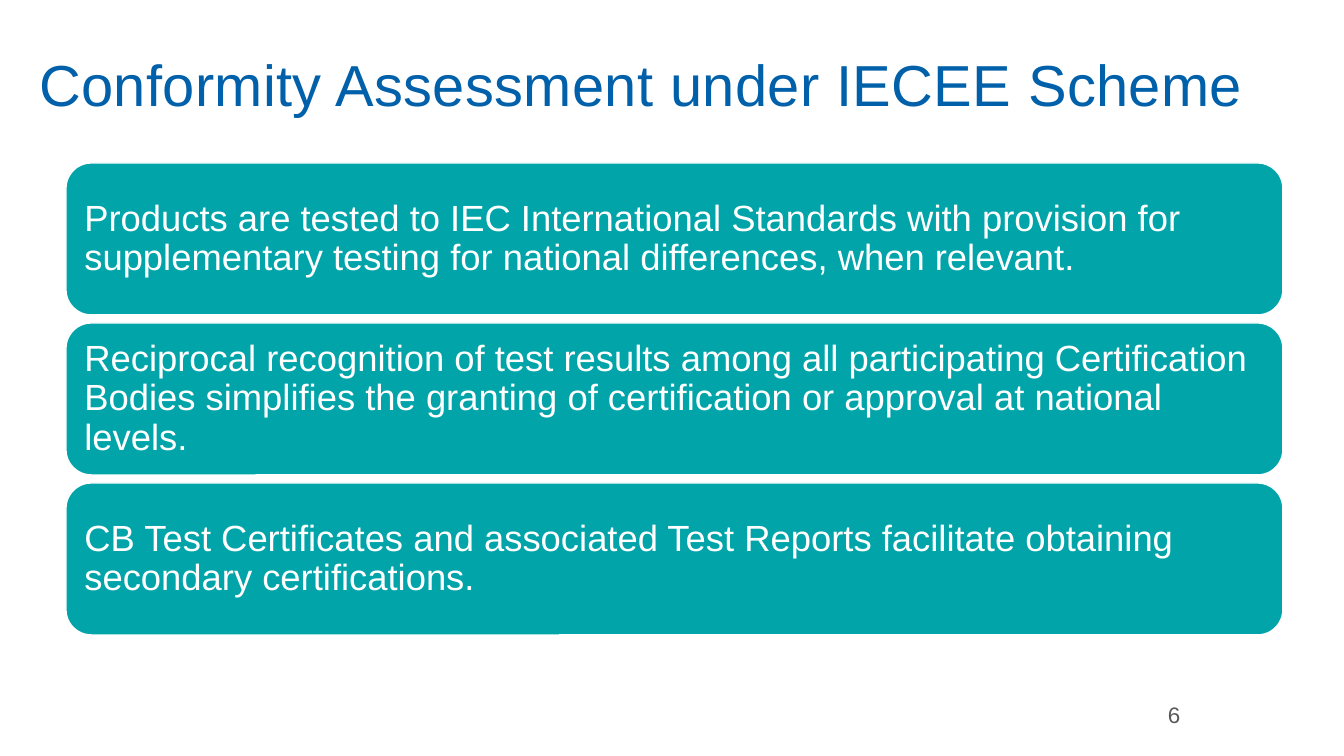
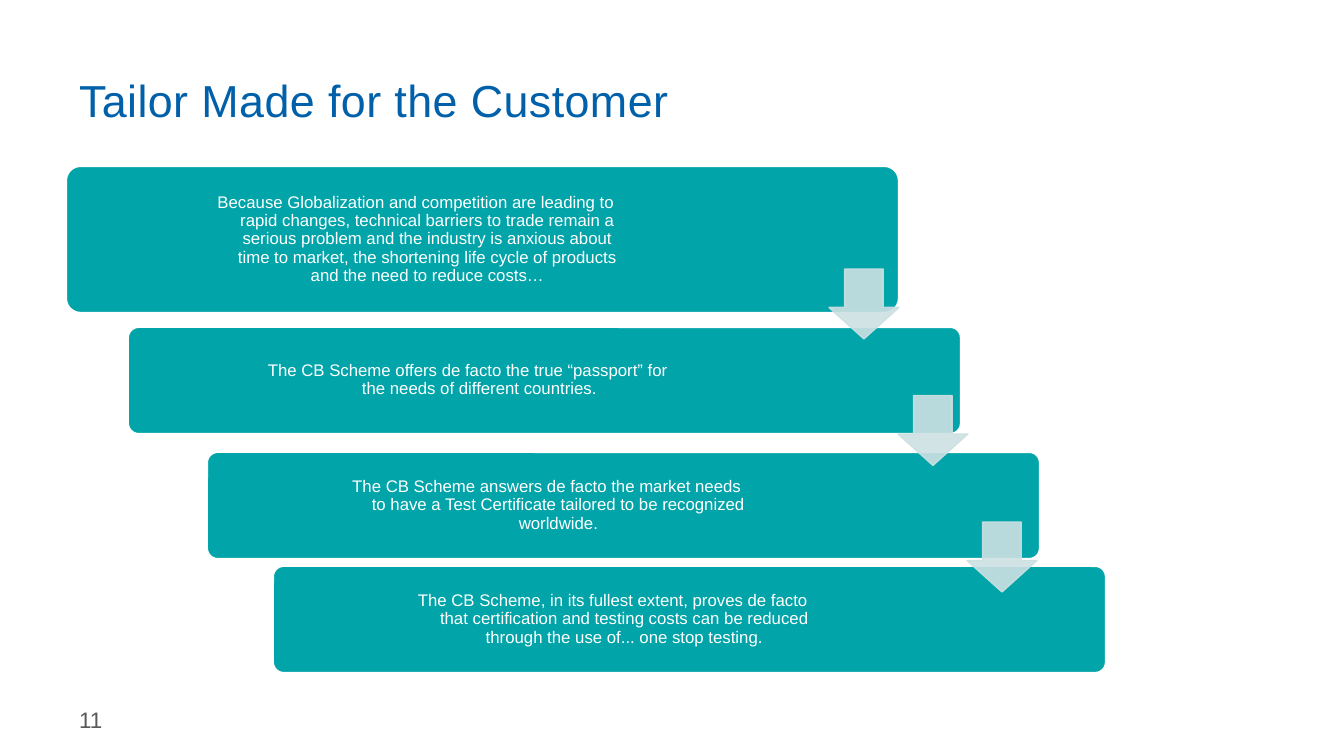
from lxml.etree import SubElement
from pptx import Presentation
from pptx.dml.color import RGBColor
from pptx.enum.shapes import MSO_SHAPE
from pptx.enum.text import MSO_ANCHOR, MSO_AUTO_SIZE, PP_ALIGN
from pptx.oxml.ns import qn
from pptx.util import Emu, Pt

# Shared style
FONT = "Arial"
TITLE, TEAL, PALE, GREY, WHITE = "0060A9", "00A4A9", "CCE0E2", "595959", "FFFFFF"
FRAME_INSETS = (13, 7, 13, 7)

# Content of the stacked panels
SCHEME_POINTS = [
    "Products are tested to IEC International Standards with provision for "
    "supplementary testing for national differences, when relevant.",
    "Reciprocal recognition of test results among all participating Certification "
    "Bodies simplifies the granting of certification or approval at national levels.",
    "CB Test Certificates and associated Test Reports facilitate obtaining "
    "secondary certifications.",
]
PANEL_LEFT, PANEL_TOP, PANEL_WIDTH, PANEL_HEIGHT, PANEL_STEP = 66, 163, 1217, 152, 160

# Content of the staircase: left, top, height, space kept free at the right, lines
STAIRS = [
    (66, 166, 147, 124, [
        "Because Globalization and competition are leading to",
        "rapid changes, technical barriers to trade remain a",
        "serious problem and the industry is anxious about",
        "time to market, the shortening life cycle of products",
        "and the need to reduce costs…"]),
    (128, 327, 107, 144, [
        "The CB Scheme offers de facto the true “passport” for",
        "the needs of different countries."]),
    (207, 452, 107, 144, [
        "The CB Scheme answers de facto the market needs",
        "to have a Test Certificate tailored to be recognized",
        "worldwide."]),
    (273, 566, 107, 144, [
        "The CB Scheme, in its fullest extent, proves de facto",
        "that certification and testing costs can be reduced",
        "through the use of... one stop testing."]),
]
STAIR_WIDTH = 833
HANG = 23  # later lines sit slightly right of the first
ARROW_LEFT, ARROW_TOP, ARROW_SIZE = 829, 269, 70
ARROW_STEP_X, ARROW_STEP_Y = 69, 126.5


def px(length):
    return Emu(round(length * 914400 / 100.8))


def rgb(value):
    return RGBColor.from_string(value)


def place(shape, left, top, width, height):
    shape.left, shape.top = px(left), px(top)
    shape.width, shape.height = px(width), px(height)


def write(shape, text, size, color, insets, align=PP_ALIGN.LEFT, hang=0):
    """Put one paragraph in a shape and return it."""
    frame = shape.text_frame
    frame.word_wrap = True
    frame.auto_size = MSO_AUTO_SIZE.NONE
    frame.vertical_anchor = MSO_ANCHOR.MIDDLE
    (frame.margin_left, frame.margin_top,
     frame.margin_right, frame.margin_bottom) = map(px, insets)
    para = frame.paragraphs[0]
    para.text = text
    para.alignment = align
    para.line_spacing = 0.9
    if hang:
        properties = para._p.get_or_add_pPr()
        properties.set("marL", str(px(hang)))
        properties.set("indent", str(-px(hang)))
    para.font.name = FONT
    para.font.size = Pt(size)
    para.font.color.rgb = rgb(color)
    return para


def add_page(deck, title, title_box, title_size, number, number_at):
    """Add a slide with its title and page number."""
    page = deck.slides.add_slide(deck.slide_layouts[5])
    heading = page.shapes.title
    place(heading, *title_box)
    para = write(heading, title, title_size, TITLE, FRAME_INSETS)
    para.font._element.set("spc", "30")
    box = page.shapes.add_textbox(*map(px, (*number_at, 116, 40)))
    write(box, number, 16, GREY, FRAME_INSETS)
    return page


def add_filled(page, kind, box, fill, line, line_width, adjustments=()):
    shape = page.shapes.add_shape(kind, *map(px, box))
    shape.shadow.inherit = False
    shape.fill.solid()
    shape.fill.fore_color.rgb = rgb(fill)
    shape.line.color.rgb = rgb(line)
    shape.line.width = Pt(line_width)
    for index, value in enumerate(adjustments):
        shape.adjustments[index] = value
    return shape


def set_opacity(shape, percent):
    """Apply one opacity to fill and outline."""
    for color in shape._element.spPr.iter(qn("a:srgbClr")):
        SubElement(color, qn("a:alpha")).set("val", str(percent * 1000))


def build_panels(deck):
    page = add_page(deck, "Conformity Assessment under IECEE Scheme",
                    (26, 20, 1301, 135), 41.3, "6", (1155, 696))
    for index, text in enumerate(SCHEME_POINTS):
        box = (PANEL_LEFT, PANEL_TOP + index * PANEL_STEP, PANEL_WIDTH, PANEL_HEIGHT)
        panel = add_filled(page, MSO_SHAPE.ROUNDED_RECTANGLE, box, TEAL, WHITE, 1)
        write(panel, text, 26, WHITE, (11, 11, 11, 11))


def build_staircase(deck):
    page = add_page(deck, "Tailor Made for the Customer",
                    (66, 30, 676, 146), 32, "11", (66, 701))
    for left, top, height, free, lines in STAIRS:
        stair = add_filled(page, MSO_SHAPE.ROUNDED_RECTANGLE,
                           (left, top, STAIR_WIDTH, height), TEAL, WHITE, 1.5, [0.1])
        write(stair, "\v".join(lines), 12, WHITE, (5, 5, free + 14, 5),
              PP_ALIGN.CENTER, HANG)
    # One arrow between each pair of stairs
    for index in range(len(STAIRS) - 1):
        box = (ARROW_LEFT + index * ARROW_STEP_X, ARROW_TOP + index * ARROW_STEP_Y,
               ARROW_SIZE, ARROW_SIZE)
        arrow = add_filled(page, MSO_SHAPE.DOWN_ARROW, box, PALE, PALE, 1, [0.55, 0.45])
        set_opacity(arrow, 90)


def main():
    deck = Presentation()
    deck.slide_width, deck.slide_height = px(1344), px(756)
    build_panels(deck)
    build_staircase(deck)
    deck.save("out.pptx")


if __name__ == "__main__":
    main()
